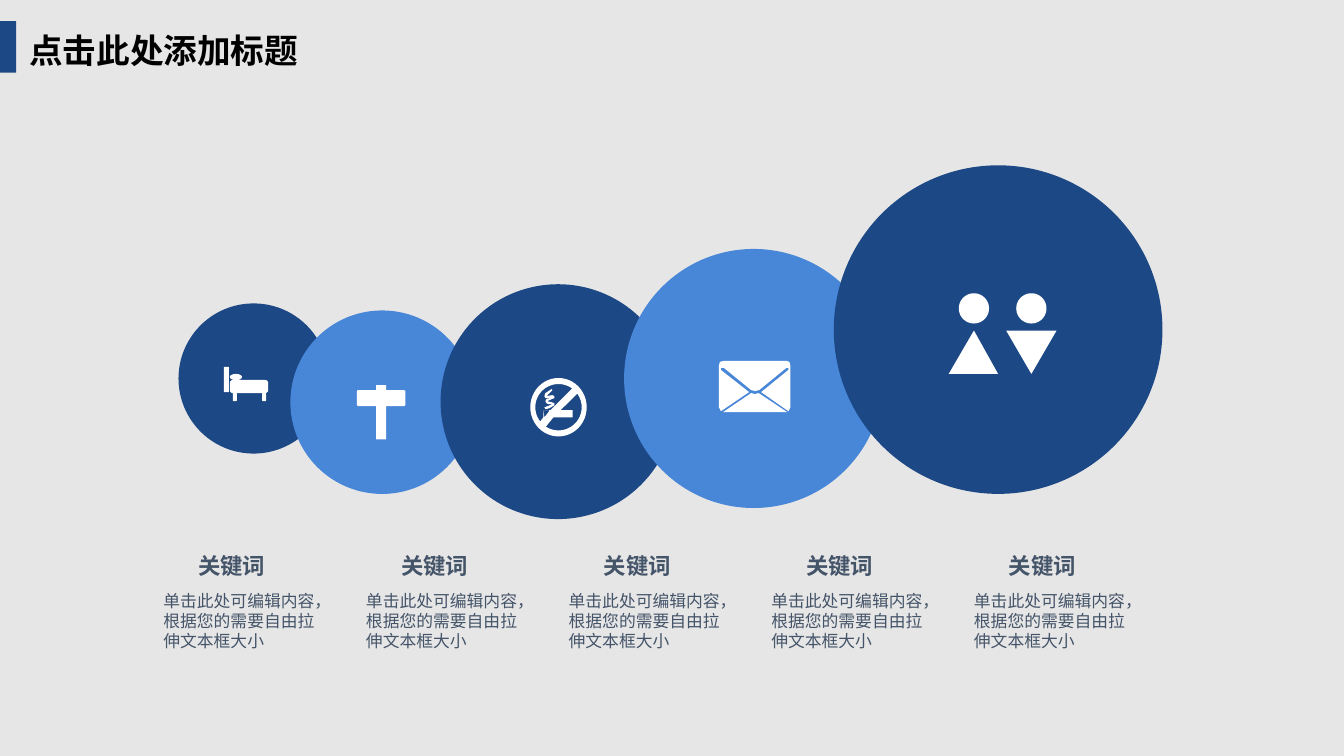
from math import cos, radians, sin

from lxml.etree import SubElement
from pptx import Presentation
from pptx.dml.color import RGBColor
from pptx.enum.shapes import MSO_SHAPE
from pptx.enum.text import MSO_ANCHOR, MSO_AUTO_SIZE, PP_ALIGN
from pptx.oxml.ns import qn
from pptx.util import Inches, Pt

NAVY, SKY, WHITE, BLACK = "1C4885", "4886D8", "FFFFFF", "000000"
SLATE, PALE = "445469", "E7E6E6"


def colour(hex_code):
    return RGBColor.from_string(hex_code)


def arc(cx, cy, rx, ry, start=0, end=360, steps=48):
    """Points along an ellipse, clockwise in degrees from the right."""
    angles = [radians(start + (end - start) * i / steps) for i in range(steps + 1)]
    return [(cx + rx * cos(a), cy + ry * sin(a)) for a in angles]


def box(left, top, right, bottom, radius=0):
    """Outline of a rectangle, with rounded corners if a radius is given."""
    if not radius:
        return [(left, top), (right, top), (right, bottom), (left, bottom)]
    corners = [(right - radius, bottom - radius, 0), (left + radius, bottom - radius, 90),
               (left + radius, top + radius, 180), (right - radius, top + radius, 270)]
    return [point for x, y, angle in corners
            for point in arc(x, y, radius, radius, angle, angle + 90, 6)]


class SlideBuilder:
    latin_font = "Arial"
    title_font = "Noto Sans CJK SC"

    def __init__(self, slide):
        self.slide = slide
        self.shapes = slide.shapes

    def background(self, fill):
        self.slide.background.fill.solid()
        self.slide.background.fill.fore_color.rgb = colour(fill)

    def paint(self, shape, fill):
        shape.shadow.inherit = False
        shape.fill.solid()
        shape.fill.fore_color.rgb = colour(fill)
        shape.line.fill.background()

    def shape(self, kind, left, top, width, height, fill):
        self.paint(self.shapes.add_shape(
            kind, Inches(left), Inches(top), Inches(width), Inches(height)), fill)

    def icon(self, contours, fill=WHITE):
        outlines = [[(Inches(x), Inches(y)) for x, y in contour] for contour in contours]
        builder = self.shapes.build_freeform(*outlines[0][0])
        for outline in outlines:
            builder.move_to(*outline[0])
            builder.add_line_segments(outline[1:], close=True)
        self.paint(builder.convert_to_shape(), fill)

    def style_text(self, frame, words, size, font, ink, bold=False, align=PP_ALIGN.LEFT):
        frame.text = words
        frame.auto_size = MSO_AUTO_SIZE.SHAPE_TO_FIT_TEXT
        paragraph = frame.paragraphs[0]
        paragraph.alignment = align
        for run in paragraph.runs:
            run.font.size, run.font.bold, run.font.name = Pt(size), bold, font
            run.font.color.rgb = colour(ink)
            SubElement(run.font._element, qn("a:ea"), typeface=font)

    def title(self, words, left, top, width, height):
        heading = self.shapes.title
        heading.left, heading.top = Inches(left), Inches(top)
        heading.width, heading.height = Inches(width), Inches(height)
        self.style_text(heading.text_frame, words, 24, self.title_font, BLACK, bold=True)
        heading.text_frame.word_wrap = False
        heading.text_frame.vertical_anchor = MSO_ANCHOR.MIDDLE

    def label(self, words, left, top, width, height, size, **style):
        frame = self.shapes.add_textbox(
            Inches(left), Inches(top), Inches(width), Inches(height)).text_frame
        frame.margin_left = frame.margin_right = frame.margin_top = frame.margin_bottom = 0
        self.style_text(frame, words, size, self.latin_font, SLATE, **style)
        frame.word_wrap = True


def bed():
    legs = [box(x, 3.9, x + 0.04, 3.98, 0.01) for x in (2.31, 2.6)]
    return [box(2.22, 3.64, 2.27, 3.89), *legs,
            box(2.28, 3.77, 2.66, 3.9, 0.03), arc(2.34, 3.74, 0.06, 0.03)]


def signpost():
    return [[(3.73, 3.82), (3.83, 3.82), (3.83, 3.87), (4.01, 3.87), (4.02, 3.88),
             (4.02, 4.02), (4.01, 4.03), (3.83, 4.03), (3.83, 4.36), (3.73, 4.36),
             (3.73, 4.03), (3.55, 4.03), (3.54, 4.02), (3.54, 3.88), (3.55, 3.87),
             (3.73, 3.87)]]


def no_smoking():
    cx, cy = 5.54, 4.04
    upper_gap = arc(cx, cy, 0.23, 0.23, 142, 306) + [
        (5.46, 4.07), (5.39, 4.07), (5.39, 4.14)]
    lower_gap = arc(cx, cy, 0.23, 0.23, -36, 123) + [
        (5.49, 4.14), (5.68, 4.14), (5.68, 4.07), (5.56, 4.07)]
    cigarette_end = [(5.39, 4.07), (5.45, 4.07), (5.44, 4.09), (5.4, 4.14)]
    smoke = [(5.41, 3.95), (5.43, 3.95), (5.48, 3.94), (5.42, 3.96), (5.41, 3.98),
             (5.42, 4), (5.44, 4.01), (5.48, 4.01), (5.43, 4.03), (5.4, 4.04),
             (5.41, 4.06), (5.45, 4.05), (5.5, 4.02), (5.5, 4), (5.47, 3.99),
             (5.43, 3.98), (5.47, 3.96), (5.5, 3.95), (5.5, 3.93), (5.48, 3.92),
             (5.42, 3.93), (5.46, 3.89), (5.48, 3.87), (5.47, 3.86), (5.41, 3.9),
             (5.4, 3.93)]
    return [arc(cx, cy, 0.28, 0.29), upper_gap, lower_gap, cigarette_end, smoke]


def envelope():
    pocket = [(7.54, 3.91), (7.52, 3.9), (7.49, 3.91), (7.45, 3.9), (7.17, 4.09), (7.81, 4.09)]
    flap = [(7.8, 3.58), (7.18, 3.58), (7.14, 3.59), (7.13, 3.63), (7.13, 4.04),
            (7.15, 4.08), (7.43, 3.89), (7.15, 3.67), (7.15, 3.65), (7.18, 3.65),
            (7.45, 3.87), (7.49, 3.88), (7.53, 3.87), (7.8, 3.65), (7.82, 3.65),
            (7.82, 3.67), (7.55, 3.89), (7.82, 4.08), (7.84, 4.04), (7.84, 3.63),
            (7.83, 3.59)]
    return [pocket, flap]


def restroom():
    heads = [arc(x, 3.06, 0.15, 0.15) for x in (9.66, 10.23)]
    woman = [(9.41, 3.71), (9.9, 3.71), (9.66, 3.28)]
    man = [(9.98, 3.28), (10.48, 3.28), (10.23, 3.71)]
    return [*heads, woman, man]


def main():
    deck = Presentation()
    deck.slide_width, deck.slide_height = Inches(13.33), Inches(7.5)
    page = SlideBuilder(deck.slides.add_slide(deck.slide_layouts[5]))
    page.background(PALE)

    # Heading with its accent bar
    page.title("点击此处添加标题", 0.19, 0.24, 2.89, 0.51)
    page.shape(MSO_SHAPE.RECTANGLE, 0, 0.21, 0.16, 0.51, NAVY)

    # Growing circles
    circles = [(1.77, 3.01, 1.49), (2.88, 3.08, 1.82), (4.37, 2.82, 2.33),
               (6.19, 2.47, 2.57), (8.27, 1.64, 3.26)]
    for step, (left, top, diameter) in enumerate(circles):
        page.shape(MSO_SHAPE.OVAL, left, top, diameter, diameter, (NAVY, SKY)[step % 2])

    # Icons in the circles
    for drawing in (bed, signpost, no_smoking, envelope, restroom):
        page.icon(drawing())

    # Keyword columns
    for column in range(len(circles)):
        left = 1.02 + 2.01 * column
        page.label("关键词", left, 5.48, 2.56, 0.27, 16, bold=True, align=PP_ALIGN.CENTER)
        page.label("单击此处可编辑内容，根据您的需要自由拉伸文本框大小",
                   left + 0.6, 5.86, 1.51, 0.61, 12)

    deck.save("out.pptx")


if __name__ == "__main__":
    main()
